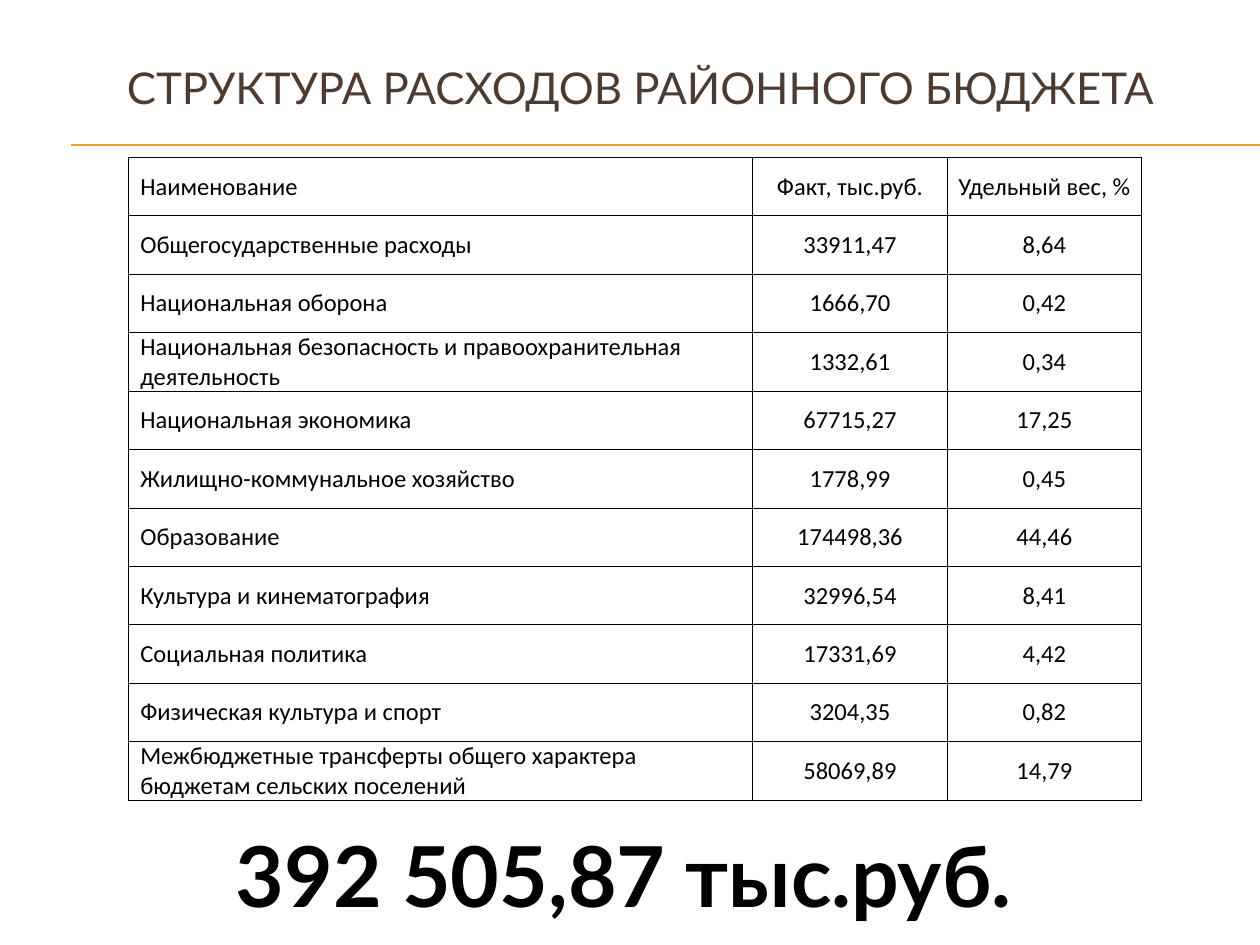
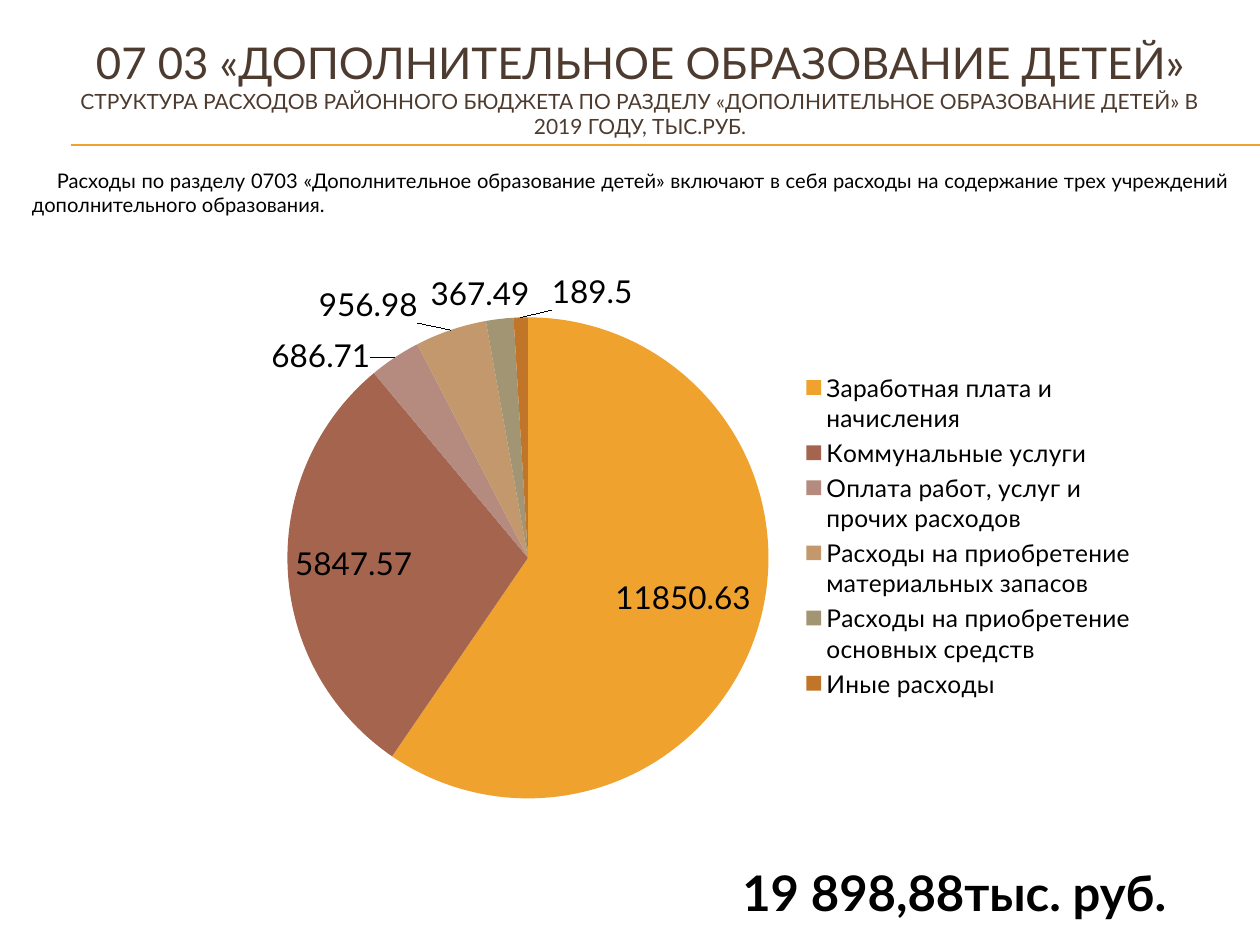
import pptx
import pptx.util
import pptx.chart.data
import pptx.dml.color
import pptx.enum.chart
import pptx.enum.shapes
import pptx.enum.text
import pptx.oxml
import pptx.oxml.ns

Pt = pptx.util.Pt
ALIGN = pptx.enum.text.PP_ALIGN
MIDDLE = pptx.enum.text.MSO_ANCHOR.MIDDLE
SPOT = pptx.enum.chart.XL_LABEL_POSITION
NS = pptx.oxml.ns.nsdecls("a", "c")
HEX = {"title": "4E3B30", "text": "000000", "rule": "F0A22E"}
SLICES = ["F0A22E", "A5644E", "B58B80", "C3986D", "A19574", "C17529"]


def style(font, size, color="text", bold=False, face="Lato"):
    font.name, font.size, font.bold = face, Pt(size), bold
    font.color.rgb = pptx.dml.color.RGBColor.from_string(HEX[color])


def place(x, y, w=None, h=None):
    """Make a manual chart layout; without a size, x and y are label shifts."""
    parts = [("x", x), ("y", y)]
    if w:
        parts = [("xMode", "edge"), ("yMode", "edge")] + parts + [("w", w), ("h", h)]
    if w and h > 0.8:
        parts.insert(0, ("layoutTarget", "inner"))
    tags = "".join(f'<c:{tag} val="{val}"/>' for tag, val in parts)
    return pptx.oxml.parse_xml(
        f"<c:layout {NS}><c:manualLayout>{tags}</c:manualLayout></c:layout>")


deck = pptx.Presentation()
deck.slide_width, deck.slide_height = Pt(720), Pt(540)

# Titles and the double rule under them
titles = [
    [("СТРУКТУРА РАСХОДОВ РАЙОННОГО БЮДЖЕТА", 25)],
    [("07 03 «ДОПОЛНИТЕЛЬНОЕ ОБРАЗОВАНИЕ ДЕТЕЙ»", 25),
     ("СТРУКТУРА РАСХОДОВ РАЙОННОГО БЮДЖЕТА ПО РАЗДЕЛУ «ДОПОЛНИТЕЛЬНОЕ "
      "ОБРАЗОВАНИЕ ДЕТЕЙ» В 2019 ГОДУ, ТЫС.РУБ.", 12)],
]
totals = [
    ("392 505,87 тыс.руб.", 48, (121, 467, 471, 66)),
    ("19 898,88тыс. руб.", 28, (416, 489.6, 258.5, 41)),
]
slides = []
for lines, (total, size, area) in zip(titles, totals):
    slide = deck.slides.add_slide(deck.slide_layouts[5])
    slides.append(slide)
    for y in (82.8, 83.2):
        rule = slide.shapes.add_connector(
            pptx.enum.shapes.MSO_CONNECTOR.STRAIGHT, Pt(40.5), Pt(y), Pt(720), Pt(y))
        rule.line.color.rgb = pptx.dml.color.RGBColor.from_string(HEX["rule"])
        rule.line.width = Pt(0.75)
        rule._element.spPr.append(pptx.oxml.parse_xml(f"<a:effectLst {NS}/>"))

    title = slide.shapes.title
    title.left, title.top, title.width, title.height = map(Pt, (23.8, 16.7, 684, 66.2))
    title.text_frame.vertical_anchor = MIDDLE
    par = title.text_frame.paragraphs[0]
    par.alignment = ALIGN.CENTER
    for num, (text, points) in enumerate(lines):
        if num:
            par.add_line_break()
        run = par.add_run()
        run.text = text
        style(run.font, points, "title")

    box = slide.shapes.add_textbox(*map(Pt, area))
    box.text_frame.word_wrap = True
    par = box.text_frame.paragraphs[0]
    par.alignment = ALIGN.CENTER
    run = par.add_run()
    run.text = total
    style(run.font, size, bold=True)

# Slide 1: spending table
rows = [
    ("Наименование", "Факт, тыс.руб.", "Удельный вес, %"),
    ("Общегосударственные расходы", "33911,47", "8,64"),
    ("Национальная оборона", "1666,70", "0,42"),
    ("Национальная безопасность и правоохранительная деятельность", "1332,61", "0,34"),
    ("Национальная экономика", "67715,27", "17,25"),
    ("Жилищно-коммунальное хозяйство", "1778,99", "0,45"),
    ("Образование", "174498,36", "44,46"),
    ("Культура и кинематография", "32996,54", "8,41"),
    ("Социальная политика", "17331,69", "4,42"),
    ("Физическая культура и спорт", "3204,35", "0,82"),
    ("Межбюджетные трансферты общего характера бюджетам сельских поселений",
     "58069,89", "14,79"),
]
table = slides[0].shapes.add_table(
    len(rows), 3, Pt(73.4), Pt(90), Pt(579), Pt(33.35 * len(rows))).table
table.first_row = table.horz_banding = False
for col, width in zip(table.columns, (356.8, 111.1, 111.1)):
    col.width = Pt(width)
for i, row in enumerate(rows):
    table.rows[i].height = Pt(33.35)
    for j, text in enumerate(row):
        cell = table.cell(i, j)
        cell.margin_left = Pt(0 if j else 6.8)
        cell.margin_right = cell.margin_top = cell.margin_bottom = 0
        cell.vertical_anchor = MIDDLE
        cell.fill.background()
        for k, side in enumerate("LRTB"):
            cell._tc.tcPr.insert(k, pptx.oxml.parse_xml(
                f'<a:ln{side} {NS} w="6350"><a:solidFill>'
                f'<a:srgbClr val="{HEX["text"]}"/></a:solidFill></a:ln{side}>'))
        par = cell.text_frame.paragraphs[0]
        par.alignment = ALIGN.CENTER if j else ALIGN.LEFT
        run = par.add_run()
        run.text = text
        style(run.font, 14, face="Calibri")

# Slide 2: introduction
intro = slides[1].shapes.add_shape(
    pptx.enum.shapes.MSO_SHAPE.RECTANGLE, Pt(11.2), Pt(84.6), Pt(697.7), Pt(50.4))
intro.shadow.inherit = False
intro.fill.background()
intro.line.fill.background()
intro.text_frame.word_wrap = True
intro.text_frame.vertical_anchor = MIDDLE
par = intro.text_frame.paragraphs[0]
par.alignment = ALIGN.JUSTIFY
par._p.get_or_add_pPr().set("indent", str(Pt(14.2)))
run = par.add_run()
run.text = ("Расходы по разделу 0703 «Дополнительное образование детей» включают в себя "
            "расходы на содержание трех учреждений дополнительного образования.")
style(run.font, 11.5)

# Slide 2: pie of spending
data = pptx.chart.data.CategoryChartData()
data.categories = [
    "Заработная плата и начисления", "Коммунальные услуги",
    "Оплата работ, услуг и прочих расходов",
    "Расходы на приобретение материальных запасов",
    "Расходы на приобретение основных средств", "Иные расходы",
]
data.add_series("Series 1", [11850.63, 5847.57, 686.71, 956.98, 367.49, 189.5])
chart = slides[1].shapes.add_chart(
    pptx.enum.chart.XL_CHART_TYPE.PIE, Pt(73.4), Pt(146.2), Pt(585.4), Pt(319.7), data).chart
chart.has_title = False
style(chart.font, 18)
chart.has_legend = True
chart.legend.position = pptx.enum.chart.XL_LEGEND_POSITION.RIGHT
chart.legend.include_in_layout = False
style(chart.legend.font, 14)
chart.plots[0].vary_by_categories = True

series = chart.plots[0].series[0]
labels = series.data_labels
labels.show_value = True
style(labels.font, 18)
shifts = {0: (0, -0.02), 1: (0, -0.01), 2: (-0.02, 0.04),
          3: (-0.03, 0), 4: (0.03, 0), 5: (0.07, 0)}
for i, color in enumerate(SLICES):
    point = series.points[i]
    point.format.fill.solid()
    point.format.fill.fore_color.rgb = pptx.dml.color.RGBColor.from_string(color)
    style(point.data_label.font, 18)
    point.data_label.position = SPOT.INSIDE_END if i < 2 else SPOT.OUTSIDE_END
    label = labels._element.xpath(f"c:dLbl[c:idx/@val='{i}']")[0]
    label.insert(1, place(*shifts[i]))

root = chart._chartSpace
for old in root.xpath("c:chart/c:plotArea/c:layout | c:chart/c:legend/c:layout"):
    old.getparent().remove(old)
root.xpath("c:chart/c:plotArea")[0].insert(0, place(0.15, 0.11, 0.48, 0.86))
root.xpath("c:chart/c:legend")[0].insert(1, place(0.65, 0.2, 0.34, 0.6))

deck.save("out.pptx")
